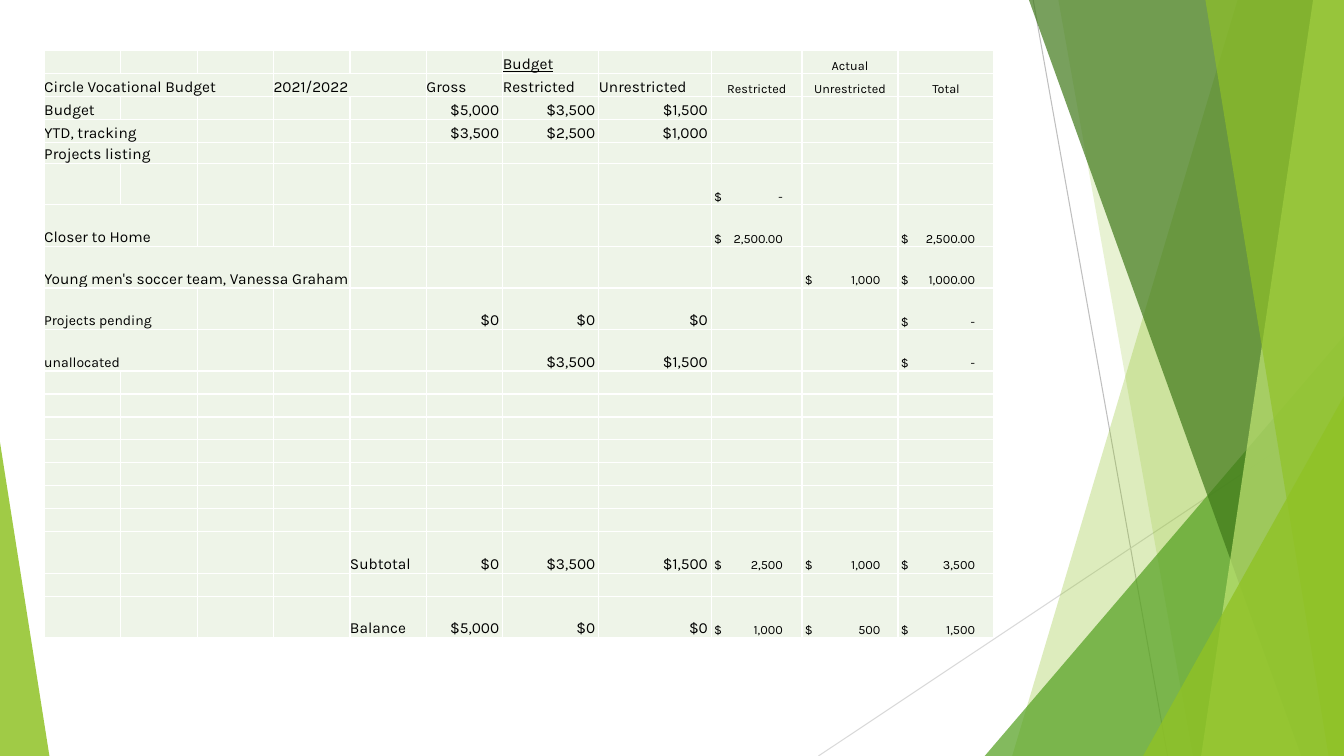
from lxml import etree
from pptx import Presentation
from pptx.dml.color import RGBColor
from pptx.enum.shapes import MSO_CONNECTOR, MSO_SHAPE
from pptx.enum.text import MSO_ANCHOR, PP_ALIGN
from pptx.oxml.ns import qn
from pptx.util import Pt

LINE = MSO_CONNECTOR.STRAIGHT
TRIANGLE = MSO_SHAPE.ISOSCELES_TRIANGLE
BOTTOM = MSO_ANCHOR.BOTTOM
LEFT, CENTER, RIGHT = PP_ALIGN.LEFT, PP_ALIGN.CENTER, PP_ALIGN.RIGHT

WHITE = RGBColor(0xFF, 0xFF, 0xFF)
BLACK = RGBColor(0, 0, 0)
PALE = RGBColor(0xEE, 0xF4, 0xE8)
GREY = RGBColor(0xBF, 0xBF, 0xBF)
SILVER = RGBColor(0xD9, 0xD9, 0xD9)
LIME = RGBColor(0x90, 0xC2, 0x26)
LEAF = RGBColor(0x54, 0xA0, 0x21)
MOSS = RGBColor(0x3F, 0x78, 0x19)
MINT = RGBColor(0xC0, 0xE4, 0x74)

WIDE, HIGH = 960, 540
FONT = "Karla"
COLS = [54.6] * 6 + [68.6, 80.4, 64.7, 68.6, 68.6]
LOW, MID, TALL = 14.8, 16.4, 29.7
ACTUAL = 8  # first column of the "Actual" block
TABS = {8: 49, 9: 54, 10: 53}  # right edge of the amounts
SMALL = {"Projects pending", "unallocated"}

# Row height, then text by column
ROWS = [
    (MID, {6: "Budget", 9: "Actual"}),
    (MID, {0: "Circle Vocational Budget", 3: "2021/2022", 5: "Gross",
           6: "Restricted", 7: "Unrestricted", 8: "Restricted",
           9: "Unrestricted", 10: "Total"}),
    (MID, {0: "Budget", 5: "$5,000", 6: "$3,500", 7: "$1,500"}),
    (MID, {0: "YTD, tracking", 5: "$3,500", 6: "$2,500", 7: "$1,000"}),
    (LOW, {0: "Projects listing"}),
    (TALL, {8: "$\t-"}),
    (TALL, {0: "Closer to Home", 8: "$\t2,500.00", 10: "$\t2,500.00"}),
    (TALL, {0: "Young men's soccer team, Vanessa Graham",
            9: "$\t1,000", 10: "$\t1,000.00"}),
    (TALL, {0: "Projects pending", 5: "$0", 6: "$0", 7: "$0", 10: "$\t-"}),
    (TALL, {0: "unallocated", 6: "$3,500", 7: "$1,500", 10: "$\t-"}),
    *[(MID, {})] * 7,
    (TALL, {4: "Subtotal", 5: "$0", 6: "$3,500", 7: "$1,500",
            8: "$\t2,500", 9: "$\t1,000", 10: "$\t3,500"}),
    (MID, {}),
    (TALL, {4: "Balance", 5: "$5,000", 6: "$0", 7: "$0",
            8: "$\t1,000", 9: "$\t500", 10: "$\t1,500"}),
]
# Row, first column, last column
SPANS = [(1, 0, 2), (1, 3, 4), (3, 0, 1), (4, 0, 1), (6, 0, 1),
         (7, 0, 3), (8, 0, 1), (9, 0, 1)]


def assign(item, values):
    for name, value in values.items():
        setattr(item, name, value)


def add_line(slide, start, end, color):
    line = slide.shapes.add_connector(LINE, *map(Pt, start + end))
    line.line.color.rgb = color
    line.line.width = Pt(0.75)
    etree.SubElement(line._element.spPr, qn("a:effectLst"))


def tint(shape, color, alpha):
    """Fill with a see-through colour; alpha is opacity in percent."""
    shape.shadow.inherit = False
    shape.line.fill.background()
    shape.fill.solid()
    shape.fill.fore_color.rgb = color
    node = shape._element.spPr.find(qn("a:solidFill"))[0]
    etree.SubElement(node, qn("a:alpha"), val=str(alpha * 1000))


def add_band(slide, top, base, color, alpha):
    """Draw a full-height band from a slanted left edge to the slide's right."""
    draw = slide.shapes.build_freeform(Pt(top), 0)
    corners = [(WIDE, 0), (WIDE, HIGH), (base, HIGH)]
    draw.add_line_segments([(Pt(x), Pt(y)) for x, y in corners])
    tint(draw.convert_to_shape(), color, alpha)


def add_wedge(slide, left, top, width, peak, color, alpha):
    """Draw a triangle down to the slide's foot; peak 0 is left, 1 right."""
    shape = slide.shapes.add_shape(
        TRIANGLE, Pt(left), Pt(top), Pt(width), Pt(HIGH - top))
    shape.adjustments[0] = peak
    tint(shape, color, alpha)


def add_edges(cell):
    props = cell._tc.get_or_add_tcPr()
    for spot, side in enumerate(("lnL", "lnR", "lnT", "lnB")):
        edge = etree.Element(qn("a:" + side), w=str(Pt(1)))
        fill = etree.SubElement(edge, qn("a:solidFill"))
        etree.SubElement(fill, qn("a:srgbClr"), val=str(WHITE))
        props.insert(spot, edge)


def style_cell(cell):
    assign(cell, {"margin_left": 0, "margin_right": 0, "margin_top": 0,
                  "margin_bottom": 0, "vertical_anchor": BOTTOM})
    cell.fill.solid()
    cell.fill.fore_color.rgb = PALE
    add_edges(cell)


def write_cell(cell, text, col, under):
    para = cell.text_frame.paragraphs[0]
    if not text:
        etree.SubElement(para._p, qn("a:endParaRPr"), sz="900")
        return
    run = para.add_run()
    run.text = text
    size = 9 if col >= ACTUAL else 10 if text in SMALL else 11
    assign(run.font, {"name": FONT, "size": Pt(size), "underline": under})
    run.font.color.rgb = BLACK
    if "\t" in text:
        cell.margin_left = Pt(2)
        stops = etree.SubElement(para._p.get_or_add_pPr(), qn("a:tabLst"))
        etree.SubElement(stops, qn("a:tab"), pos=str(Pt(TABS[col])), algn="r")
    elif col >= ACTUAL:
        para.alignment = CENTER
    elif text.startswith("$"):
        para.alignment = RIGHT
        cell.margin_right = Pt(2.5)
    else:
        para.alignment = LEFT


def add_budget(slide):
    high = sum(row[0] for row in ROWS)
    table = slide.shapes.add_table(
        len(ROWS), len(COLS), Pt(31.6), Pt(36.3),
        Pt(sum(COLS)), Pt(high)).table
    assign(table, {"first_row": False, "horz_banding": False})
    for col, width in enumerate(COLS):
        table.columns[col].width = Pt(width)
    for row, (height, texts) in enumerate(ROWS):
        table.rows[row].height = Pt(height)
        for col in range(len(COLS)):
            cell = table.cell(row, col)
            style_cell(cell)
            write_cell(cell, texts.get(col), col, (row, col) == (0, 6))
    for row, first, last in SPANS:
        table.cell(row, first).merge(table.cell(row, last))


def main():
    deck = Presentation()
    assign(deck, {"slide_width": Pt(WIDE), "slide_height": Pt(HIGH)})
    slide = deck.slides.add_slide(deck.slide_layouts[6])
    add_line(slide, (738, 0), (834, HIGH), GREY)
    add_line(slide, (WIDE, 290), (584.6, HIGH), SILVER)
    add_band(slide, 884, 723, LIME, 30)
    add_band(slide, 756, 852, LIME, 20)
    add_wedge(slide, 703.4, 240, 256.6, 1, LEAF, 72)
    add_band(slide, 735, 929.5, MOSS, 70)
    add_band(slide, 938, 858, MINT, 70)
    add_band(slide, 861, 949, LIME, 65)
    add_wedge(slide, 816.5, 283, 143.5, 1, LIME, 80)
    add_wedge(slide, 0, 316, 35.3, 0, LIME, 85)
    add_budget(slide)
    deck.save("out.pptx")


if __name__ == "__main__":
    main()
